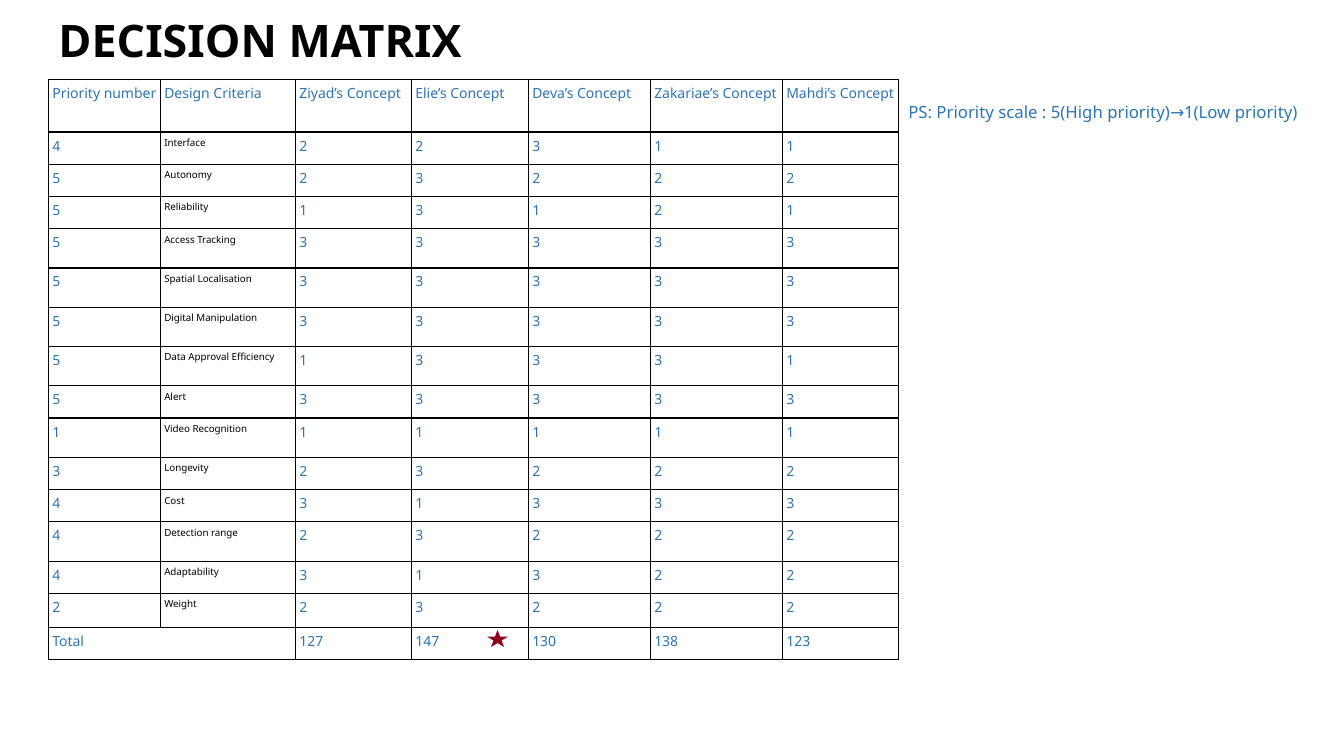
from lxml import etree
from pptx import Presentation
from pptx.dml.color import RGBColor
from pptx.enum.shapes import MSO_SHAPE
from pptx.enum.text import MSO_ANCHOR, MSO_AUTO_SIZE, PP_ALIGN
from pptx.oxml.ns import qn
from pptx.util import Pt

STAR = MSO_SHAPE.STAR_5_POINT
TOP, MIDDLE = MSO_ANCHOR.TOP, MSO_ANCHOR.MIDDLE
LEFT = PP_ALIGN.LEFT
NO_AUTOFIT = MSO_AUTO_SIZE.NONE

# Content
TITLE = "DECISION MATRIX"
NOTE = "PS: Priority scale : 5(High priority)→1(Low priority)"
HEADERS = ["Priority number", "Design Criteria", "Ziyad’s Concept", "Elie’s Concept",
           "Deva’s Concept", "Zakariae’s Concept", "Mahdi’s Concept"]
# Row height, priority, criterion, score of each concept
CRITERIA = [
    (32, 4, "Interface", 2, 2, 3, 1, 1),
    (32, 5, "Autonomy", 2, 3, 2, 2, 2),
    (32, 5, "Reliability", 1, 3, 1, 2, 1),
    (39, 5, "Access Tracking", 3, 3, 3, 3, 3),
    (39, 5, "Spatial Localisation", 3, 3, 3, 3, 3),
    (39, 5, "Digital Manipulation", 3, 3, 3, 3, 3),
    (39, 5, "Data Approval Efficiency", 1, 3, 3, 3, 1),
    (32, 5, "Alert", 3, 3, 3, 3, 3),
    (39, 1, "Video Recognition", 1, 1, 1, 1, 1),
    (32, 3, "Longevity", 2, 3, 2, 2, 2),
    (32, 4, "Cost", 3, 1, 3, 3, 3),
    (39, 4, "Detection range", 2, 3, 2, 2, 2),
    (32, 4, "Adaptability", 3, 1, 3, 2, 2),
    (34, 2, "Weight", 2, 3, 2, 2, 2),
]
TOTALS = ["Total", "", 127, 147, 130, 138, 123]
COLUMN_WIDTHS = [111, 134, 115, 116, 121, 131, 115]
HEADER_HEIGHT, TOTAL_HEIGHT = 52, 32
CELL_MARGIN = 4

FONT = "Noto Sans"
BLACK, BLUE, RED = "000000", "2E75B5", "8F001A"
EMU_PER_PX = 9144  # 100 px to the inch


def px(length):
    return length * EMU_PER_PX


def color(value):
    return RGBColor.from_string(value)


def write(frame, text, size=10, fill=BLUE, bold=False, spacing=1.0):
    para = frame.paragraphs[0]
    para.alignment = LEFT
    para.line_spacing = spacing
    span = para.add_run()
    span.text = str(text)
    span.font.name = FONT
    span.font.size = Pt(size)
    span.font.bold = bold
    span.font.color.rgb = color(fill)


def add_borders(cell):
    properties = cell._tc.get_or_add_tcPr()
    for index, side in enumerate(("a:lnL", "a:lnR", "a:lnT", "a:lnB")):
        line = etree.Element(qn(side), w=str(Pt(1)))
        solid = etree.SubElement(line, qn("a:solidFill"))
        etree.SubElement(solid, qn("a:srgbClr"), val=BLACK)
        properties.insert(index, line)


def add_title(page):
    title = page.shapes.title
    title.left, title.top, title.width, title.height = map(px, (48, 16, 423, 53))
    frame = title.text_frame
    frame.auto_size = NO_AUTOFIT
    frame.vertical_anchor = MIDDLE
    write(frame, TITLE, size=32, fill=BLACK, bold=True, spacing=0.9)


def add_matrix(page):
    rows = [HEADERS, *(row[1:] for row in CRITERIA), TOTALS]
    heights = [HEADER_HEIGHT, *(row[0] for row in CRITERIA), TOTAL_HEIGHT]
    table = page.shapes.add_table(
        len(rows), len(HEADERS), px(48), px(79),
        px(sum(COLUMN_WIDTHS)), px(sum(heights))).table
    table.first_row = table.horz_banding = False
    for column, width in zip(table.columns, COLUMN_WIDTHS):
        column.width = px(width)
    last = len(rows) - 1
    table.cell(last, 0).merge(table.cell(last, 1))

    for r, (values, height) in enumerate(zip(rows, heights)):
        table.rows[r].height = px(height)
        for c, value in enumerate(values):
            cell = table.cell(r, c)
            cell.margin_left = cell.margin_right = px(CELL_MARGIN)
            cell.margin_top = cell.margin_bottom = px(CELL_MARGIN)
            cell.vertical_anchor = TOP
            cell.fill.background()
            add_borders(cell)
            if cell.is_spanned:
                continue
            if c == 1 and r > 0:
                write(cell.text_frame, value, size=7, fill=BLACK)
            else:
                write(cell.text_frame, value)


def add_note(page):
    box = page.shapes.add_textbox(*map(px, (891, 96, 429, 91)))
    box.text_frame.word_wrap = False
    box.text_frame.vertical_anchor = TOP
    write(box.text_frame, NOTE, size=12)


def add_winner_star(page):
    star = page.shapes.add_shape(STAR, *map(px, (483, 625, 21, 17)))
    star.shadow.inherit = False
    star.fill.solid()
    star.fill.fore_color.rgb = color(RED)
    star.line.fill.background()


def main():
    deck = Presentation()
    deck.slide_width, deck.slide_height = px(1333), px(750)
    page = deck.slides.add_slide(deck.slide_layouts[5])
    add_title(page)
    add_matrix(page)
    add_note(page)
    add_winner_star(page)
    deck.save("out.pptx")


if __name__ == "__main__":
    main()
